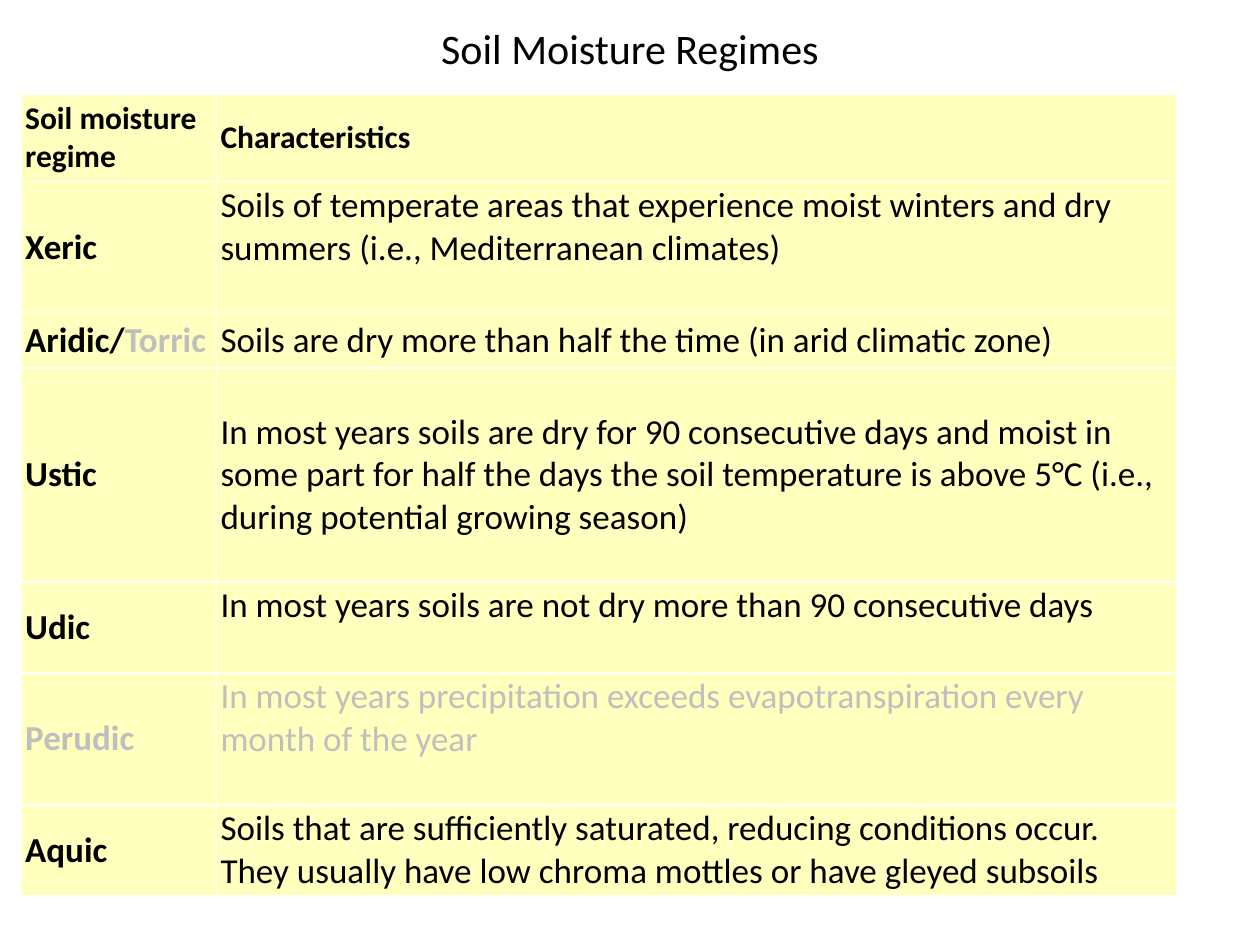
from pptx import Presentation
from pptx.dml.color import RGBColor
from pptx.enum.text import MSO_ANCHOR, PP_ALIGN
from pptx.util import Inches, Pt

MIDDLE, TOP = MSO_ANCHOR.MIDDLE, MSO_ANCHOR.TOP
CENTER = PP_ALIGN.CENTER

BLACK = RGBColor(0x00, 0x00, 0x00)
GREY = RGBColor(0xBF, 0xBF, 0xBF)
CREAM = RGBColor(0xFF, 0xFF, 0xBE)
FONT = "Calibri"

COLUMN_WIDTHS = (1.55, 7.62)

# Row height, regime runs, description paragraphs, description colour and anchor
REGIMES = [
    (1.05, [("Xeric", BLACK)],
     ["Soils of temperate areas that experience moist winters and dry "
      "summers (i.e., Mediterranean climates)"], BLACK, TOP),
    (0.43, [("Aridic/", BLACK), ("Torric", GREY)],
     ["Soils are dry more than half the time (in arid climatic zone)"],
     BLACK, MIDDLE),
    (1.7, [("Ustic", BLACK)],
     ["In most years soils are dry for 90 consecutive days and moist in "
      "some part for half the days the soil temperature is above 5°C "
      "(i.e., during potential growing season)"], BLACK, MIDDLE),
    (0.72, [("Udic", BLACK)],
     ["In most years soils are not dry more than 90 consecutive days"],
     BLACK, TOP),
    (1.05, [("Perudic", GREY)],
     ["In most years precipitation exceeds evapotranspiration every",
      "month of the year"], GREY, TOP),
    (0.71, [("Aquic", BLACK)],
     ["Soils that are sufficiently saturated, reducing conditions occur. "
      "They usually have low chroma mottles or have gleyed subsoils"],
     BLACK, MIDDLE),
]
HEADER = (0.69, "Soil moisture regime", "Characteristics")


def add_run(paragraph, text, size, color=BLACK, bold=False):
    run = paragraph.add_run()
    run.text = text
    run.font.name = FONT
    run.font.size = Pt(size)
    run.font.bold = bold
    run.font.color.rgb = color


def fill_cell(cell, paragraphs, size, bold, anchor=MIDDLE):
    """Write paragraphs, each a list of (text, colour) runs."""
    cell.fill.solid()
    cell.fill.fore_color.rgb = CREAM
    cell.vertical_anchor = anchor
    cell.margin_left = cell.margin_right = Inches(0.03)
    cell.margin_top = cell.margin_bottom = Inches(0.02)
    frame = cell.text_frame
    for index, runs in enumerate(paragraphs):
        paragraph = frame.add_paragraph() if index else frame.paragraphs[0]
        for text, color in runs:
            add_run(paragraph, text, size, color, bold)


def add_title(slide, left, top, width, height):
    title = slide.shapes.add_textbox(left, top, width, height)
    frame = title.text_frame
    frame.word_wrap = True
    frame.vertical_anchor = MIDDLE
    paragraph = frame.paragraphs[0]
    paragraph.alignment = CENTER
    add_run(paragraph, "Soil Moisture Regimes", 24)


def add_regime_table(slide, left, top, width, height):
    table = slide.shapes.add_table(
        len(REGIMES) + 1, len(COLUMN_WIDTHS), left, top, width, height).table
    table.first_row = table.horz_banding = False
    for column, column_width in zip(table.columns, COLUMN_WIDTHS):
        column.width = Inches(column_width)

    # Header row
    header_height, *headings = HEADER
    table.rows[0].height = Inches(header_height)
    for column, heading in enumerate(headings):
        fill_cell(table.cell(0, column), [[(heading, BLACK)]], 18, True)

    # One row per regime
    for row, (row_height, regime, description, color, anchor) in enumerate(REGIMES, 1):
        table.rows[row].height = Inches(row_height)
        fill_cell(table.cell(row, 0), [regime], 20, True)
        lines = [[(text, color)] for text in description]
        fill_cell(table.cell(row, 1), lines, 20, False, anchor)


def main():
    prs = Presentation()
    prs.slide_width, prs.slide_height = Inches(10), Inches(7.5)
    slide = prs.slides.add_slide(prs.slide_layouts[6])
    add_regime_table(slide, Inches(0.17), Inches(0.75), Inches(9.17), Inches(6.35))
    add_title(slide, Inches(0.5), Inches(-0.25), Inches(9), Inches(1.25))
    prs.save("out.pptx")


if __name__ == "__main__":
    main()
